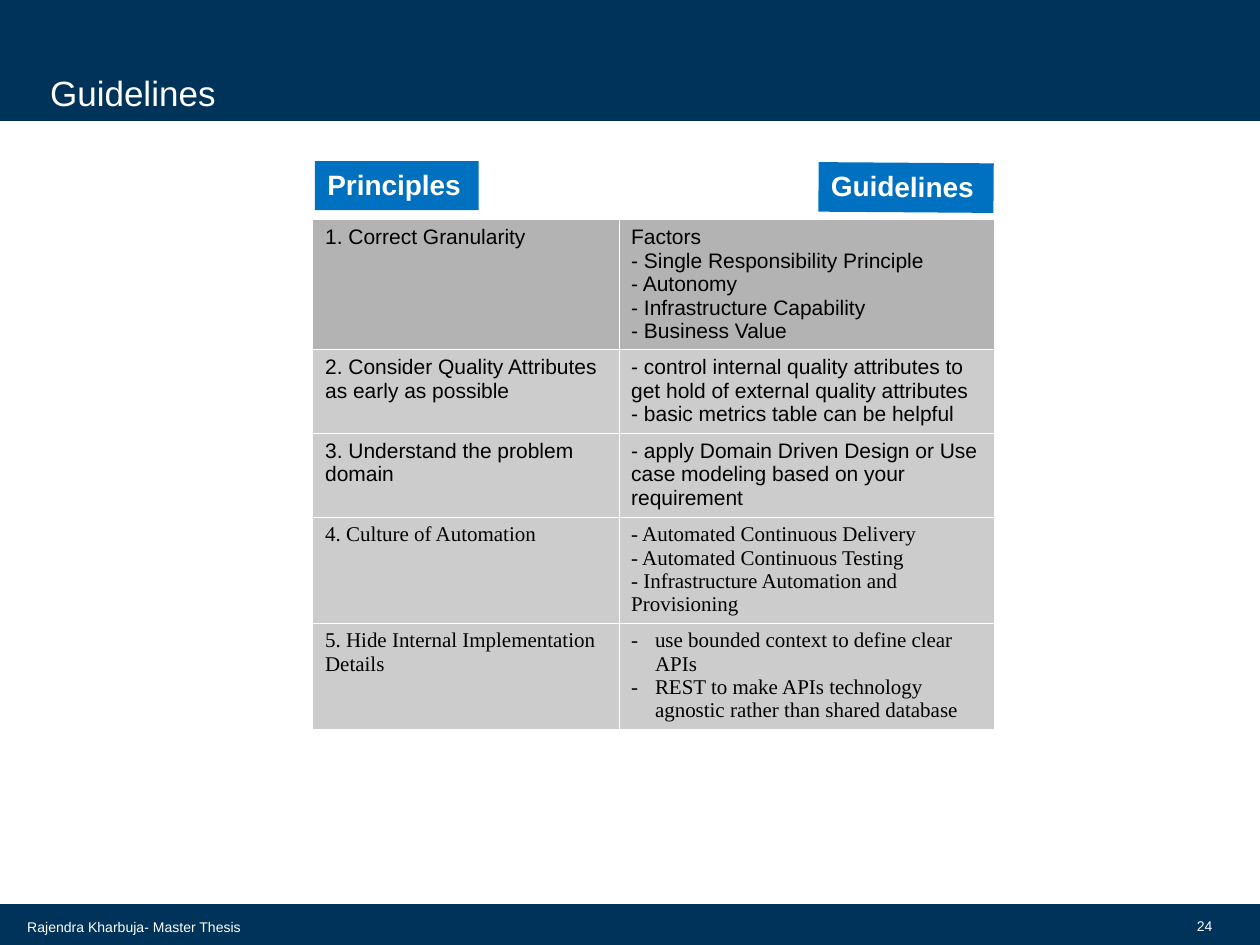
"""Build the thesis slide that pairs principles with guidelines."""
from dataclasses import dataclass

from lxml import etree
from pptx import Presentation
from pptx import util as u
from pptx.dml.color import RGBColor
from pptx.enum import shapes, text
from pptx.oxml.ns import qn

COLORS = {
    "navy": "003359",
    "blue": "0070C0",
    "white": "FFFFFF",
    "black": "000000",
    "lead": "B3B3B3",
    "body": "CCCCCC",
}
SANS, SERIF = "Arial", "Times New Roman"


@dataclass
class Area:
    left: float
    top: float
    width: float
    height: float

    def lengths(self) -> list:
        return [u.Cm(v) for v in (self.left, self.top, self.width, self.height)]


@dataclass
class Caption:
    words: str
    area: Area
    size: int
    anchor: text.MSO_ANCHOR = text.MSO_ANCHOR.MIDDLE
    align: text.PP_ALIGN = text.PP_ALIGN.LEFT
    inset: float = 0.13
    left_inset: float = 0.25
    bold: bool = False
    fill: str = ""
    rotation: float = 0


@dataclass
class Principle:
    name: str
    guidelines: list[str]
    height: float
    font: str = SANS
    fill: str = "body"
    bulleted: bool = False


BARS = [Area(0, 18.24, 25.4, 0.81), Area(0, 0, 25.4, 2.42)]
TOP = text.MSO_ANCHOR.TOP
CAPTIONS = [
    Caption("Principles", Area(6.35, 3.25, 3.3, 0.99), 16, TOP, bold=True, fill="blue"),
    Caption("Guidelines", Area(16.5, 3.28, 3.53, 1), 16, TOP, bold=True, fill="blue", rotation=0.4),
    Caption("Guidelines", Area(0.76, 1.3, 14, 0.99), 20, text.MSO_ANCHOR.BOTTOM, inset=0),
    Caption("Rajendra Kharbuja- Master Thesis", Area(0.3, 18.29, 5.41, 0.79), 8),
    Caption("24", Area(24, 18.26, 0.69, 0.81), 8, align=text.PP_ALIGN.RIGHT, left_inset=0),
]
PRINCIPLES = [
    Principle("1. Correct Granularity",
              ["Factors", "- Single Responsibility Principle", "- Autonomy",
               "- Infrastructure Capability", "- Business Value"], 1.3, fill="lead"),
    Principle("2. Consider Quality Attributes as early as possible",
              ["- control internal quality attributes to get hold of external quality attributes",
               "- basic metrics table can be helpful"], 1.27),
    Principle("3. Understand the problem domain",
              ["- apply Domain Driven Design or Use case modeling based on your requirement"], 1.7),
    Principle("4. Culture of Automation",
              ["- Automated Continuous Delivery", "- Automated Continuous Testing",
               "- Infrastructure Automation and Provisioning"], 1.7, SERIF),
    Principle("5. Hide Internal Implementation Details",
              ["use bounded context to define clear APIs",
               "REST to make APIs technology agnostic rather than shared database"],
              1.7, SERIF, bulleted=True),
]
COLUMNS = [6.17, 7.57]


def rgb(name: str) -> RGBColor:
    return RGBColor.from_string(COLORS[name])


def add_run(paragraph, words: str, size: int, color: str, font: str = SANS, bold: bool = False) -> None:
    run = paragraph.add_run()
    run.text = words
    run.font.name, run.font.size, run.font.bold = font, u.Pt(size), bold
    run.font.color.rgb = rgb(color)


def add_block(slide, area: Area, fill: str):
    block = slide.shapes.add_shape(shapes.MSO_SHAPE.RECTANGLE, *area.lengths())
    block.shadow.inherit = False
    block.fill.solid()
    block.fill.fore_color.rgb = rgb(fill)
    block.line.fill.background()
    return block


def add_bar(slide, area: Area) -> None:
    bar = add_block(slide, area, "navy")
    bar.line.color.rgb = rgb("navy")
    bar.line.width = u.Pt(1.35)


def add_caption(slide, caption: Caption) -> None:
    if caption.fill:
        holder = add_block(slide, caption.area, caption.fill)
    else:
        holder = slide.shapes.add_textbox(*caption.area.lengths())
    holder.rotation = caption.rotation
    frame = holder.text_frame
    frame.word_wrap = True
    frame.vertical_anchor = caption.anchor
    frame.margin_top = frame.margin_bottom = u.Cm(caption.inset)
    frame.margin_left = u.Cm(caption.left_inset)
    paragraph = frame.paragraphs[0]
    paragraph.alignment = caption.align
    add_run(paragraph, caption.words, caption.size, "white", bold=caption.bold)


def add_dash(paragraph, font: str) -> None:
    properties = paragraph._p.get_or_add_pPr()
    hang = u.Cm(0.48)
    properties.set("marL", str(hang))
    properties.set("indent", str(-hang))
    etree.SubElement(properties, qn("a:buFont"), typeface=font)
    etree.SubElement(properties, qn("a:buChar"), char="-")


def add_borders(cell) -> None:
    properties = cell._tc.get_or_add_tcPr()
    for side in ("L", "R", "T", "B"):
        border = etree.SubElement(properties, qn(f"a:ln{side}"), w=str(u.Pt(0.06)))
        paint = etree.SubElement(border, qn("a:solidFill"))
        etree.SubElement(paint, qn("a:srgbClr"), val=COLORS["white"])


def fill_cell(cell, entries: list[str], principle: Principle, bulleted: bool) -> None:
    add_borders(cell)
    cell.fill.solid()
    cell.fill.fore_color.rgb = rgb(principle.fill)
    frame = cell.text_frame
    for index, entry in enumerate(entries):
        paragraph = frame.add_paragraph() if index else frame.paragraphs[0]
        if bulleted:
            add_dash(paragraph, principle.font)
        add_run(paragraph, entry, 12, "black", principle.font)


def add_principles(slide) -> None:
    area = Area(6.3, 4.42, sum(COLUMNS), sum(p.height for p in PRINCIPLES))
    table = slide.shapes.add_table(len(PRINCIPLES), len(COLUMNS), *area.lengths()).table
    table.first_row = table.horz_banding = False
    for column, width in zip(table.columns, COLUMNS):
        column.width = u.Cm(width)
    for row, principle in zip(table.rows, PRINCIPLES):
        row.height = u.Cm(principle.height)
        name, guidelines = row.cells
        fill_cell(name, [principle.name], principle, False)
        fill_cell(guidelines, principle.guidelines, principle, principle.bulleted)


def main() -> None:
    deck = Presentation()
    deck.slide_width, deck.slide_height = u.Cm(25.4), u.Cm(19.05)
    slide = deck.slides.add_slide(deck.slide_layouts[6])
    for bar in BARS:
        add_bar(slide, bar)
    add_principles(slide)
    for caption in CAPTIONS:
        add_caption(slide, caption)
    deck.save("out.pptx")


if __name__ == "__main__":
    main()
